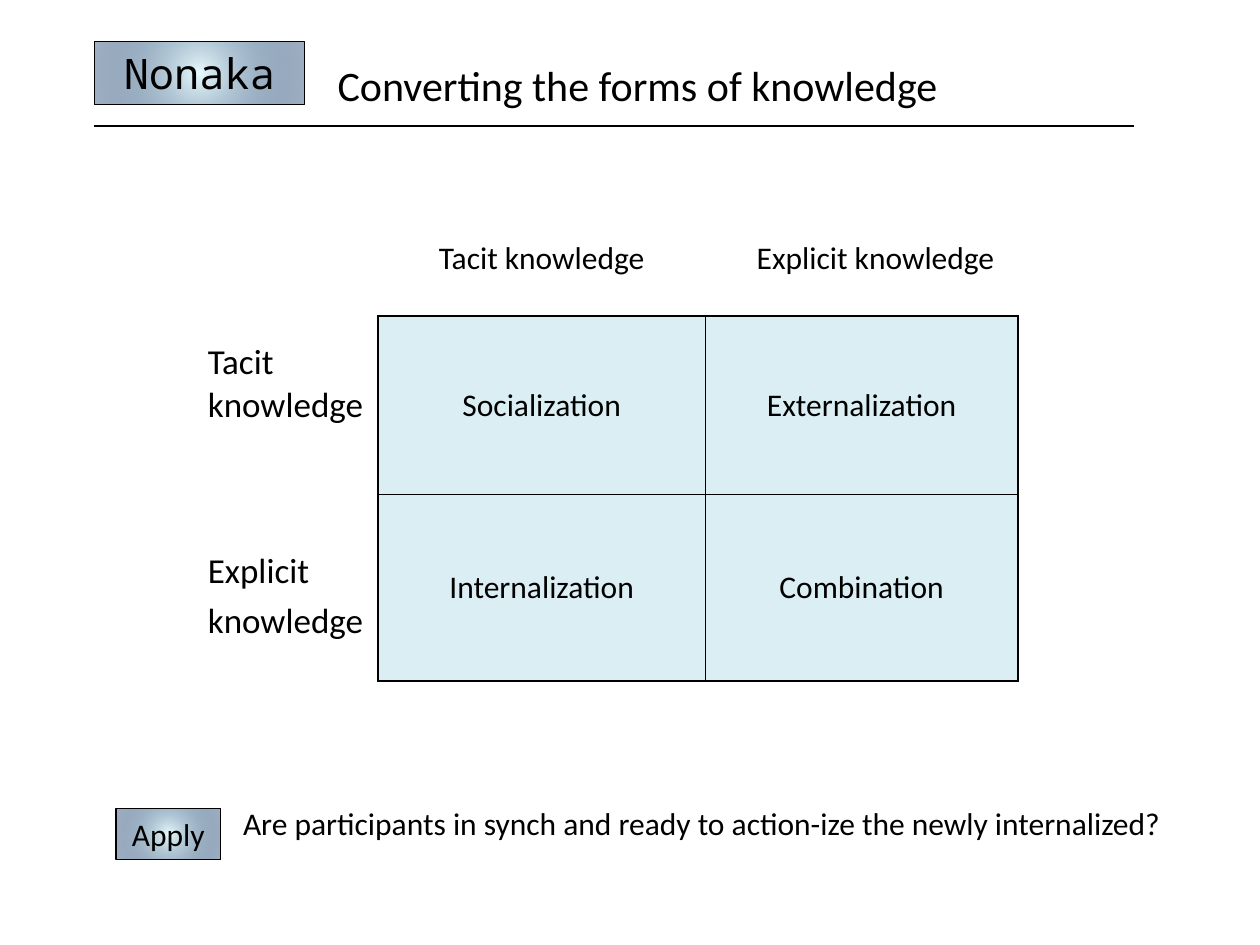
from dataclasses import dataclass
from typing import Any, NamedTuple

from lxml import etree
from pptx import Presentation
from pptx import util as u
from pptx.dml.color import RGBColor
from pptx.enum import shapes, text
from pptx.oxml import ns, parse_xml


@dataclass(frozen=True)
class Theme:
    ink: str = "000000"
    cell: str = "DAEEF3"
    glow: str = "E8FBFE"
    edge: str = "00295C"
    font: str = "Calibri"
    mono: str = "Noto Sans Mono"
    head: int = 24
    side: int = 20
    body: int = 18


class Box(NamedTuple):
    left: float
    top: float
    width: float
    height: float

    def size(self) -> list[u.Length]:
        return [u.Cm(v) for v in self]


class Badge(NamedTuple):
    label: str
    box: Box
    size: int
    font: str


class Cell(NamedTuple):
    row: int
    col: int
    label: str
    size: int
    edges: str = ""
    fill: str = ""
    align: Any = text.PP_ALIGN.CENTER
    anchor: Any = text.MSO_ANCHOR.TOP
    space: float = 1.0
    left: float = 0.18
    top: float = 0.0


T = Theme()
PLAIN = "{2D5ABB26-0587-4C30-8999-92F81FD0307C}"  # table style without grid
COLS = (3.61, 6.6, 6.3)
ROWS = (1.65, 3.6, 3.76)
GRID = Box(4.01, 4.72, sum(COLS), sum(ROWS))
LEFT, MID = text.PP_ALIGN.LEFT, text.MSO_ANCHOR.MIDDLE

BADGES = (
    Badge("Nonaka", Box(1.9, 0.84, 4.24, 1.27), T.head, T.mono),
    Badge("Apply", Box(2.34, 16.3, 2.11, 1.03), T.body, T.font),
)
QUADS = (("Socialization", "Externalization"),
         ("Internalization", "Combination"))
CELLS = [
    Cell(0, 1, "Tacit knowledge", T.body, "B", space=1.15),
    Cell(0, 2, "Explicit knowledge", T.body, "B", space=1.15, left=0.74),
    Cell(1, 0, "Tacit\vknowledge", T.side, "R", align=LEFT, top=0.5),
    Cell(2, 0, "Explicit\vknowledge", T.side, "R", align=LEFT,
         space=1.15, top=1.0),
] + [
    Cell(r, c, name, T.body, "LRTB", T.cell, anchor=MID)
    for r, line in enumerate(QUADS, 1) for c, name in enumerate(line, 1)
]


def style(obj: Any, vals: dict[str, Any]) -> None:
    for key, val in vals.items():
        setattr(obj, key, val)


def write(frame: Any, label: str, size: int, font: str = T.font,
          align: Any = LEFT, space: float = 1.0) -> None:
    frame.text = label
    para = frame.paragraphs[0]
    style(para, {"alignment": align, "line_spacing": space})
    for run in para.runs:
        style(run.font, {"size": u.Pt(size), "name": font})
        run.font.color.rgb = RGBColor.from_string(T.ink)


def draw_badge(slide: Any, badge: Badge) -> None:
    shape = slide.shapes.add_shape(shapes.MSO_SHAPE.RECTANGLE,
                                   *badge.box.size())
    shape.shadow.inherit = False
    shape.line.color.rgb = RGBColor.from_string(T.ink)
    shape.line.width = u.Pt(0.75)
    # Radial gradient that fades out towards the edge
    grad = parse_xml(
        f'<a:gradFill {ns.nsdecls("a")}><a:gsLst>'
        f'<a:gs pos="0"><a:srgbClr val="{T.glow}"/></a:gs>'
        f'<a:gs pos="100000"><a:srgbClr val="{T.edge}">'
        '<a:alpha val="36000"/></a:srgbClr></a:gs></a:gsLst>'
        '<a:path path="circle"><a:fillToRect l="50000" t="50000" '
        'r="50000" b="50000"/></a:path></a:gradFill>')
    shape._element.spPr.find(ns.qn("a:prstGeom")).addnext(grad)
    style(shape.text_frame, {"word_wrap": True, "vertical_anchor": MID})
    write(shape.text_frame, badge.label, badge.size, badge.font,
          text.PP_ALIGN.CENTER)


def draw_edges(cell: Any, edges: str) -> None:
    props = cell._tc.get_or_add_tcPr()
    for spot, side in enumerate(edges):
        line = parse_xml(
            f'<a:ln{side} {ns.nsdecls("a")} w="12700"><a:solidFill>'
            f'<a:srgbClr val="{T.ink}"/></a:solidFill></a:ln{side}>')
        props.insert(spot, line)


def draw_cell(table: Any, item: Cell) -> None:
    cell = table.cell(item.row, item.col)
    style(cell, {"margin_left": u.Cm(item.left), "margin_right": u.Cm(0.18),
                 "margin_top": u.Cm(item.top), "margin_bottom": 0,
                 "vertical_anchor": item.anchor})
    write(cell.text_frame, item.label, item.size, align=item.align,
          space=item.space)
    if item.fill:
        cell.fill.solid()
        cell.fill.fore_color.rgb = RGBColor.from_string(item.fill)
    draw_edges(cell, item.edges)


def draw_table(slide: Any) -> None:
    table = slide.shapes.add_table(len(ROWS), len(COLS), *GRID.size()).table
    style(table, {"first_row": False, "horz_banding": False})
    table._tbl.tblPr.find(ns.qn("a:tableStyleId")).text = PLAIN
    for col, width in zip(table.columns, COLS):
        col.width = u.Cm(width)
    for row, height in zip(table.rows, ROWS):
        row.height = u.Cm(height)
    for item in CELLS:
        draw_cell(table, item)


def draw_rule(slide: Any) -> None:
    rule = slide.shapes.add_connector(
        shapes.MSO_CONNECTOR.STRAIGHT,
        *(u.Cm(v) for v in (1.9, 2.54, 22.86, 2.54)))
    rule.line.color.rgb = RGBColor.from_string(T.ink)
    rule.line.width = u.Pt(0.75)
    etree.SubElement(rule._element.spPr, ns.qn("a:effectLst"))


def draw_text(shape: Any, box: Box, label: str, size: int) -> None:
    style(shape, dict(zip(box._fields, box.size())))
    style(shape.text_frame, {"word_wrap": True,
                             "auto_size": text.MSO_AUTO_SIZE.NONE,
                             "vertical_anchor": text.MSO_ANCHOR.TOP})
    write(shape.text_frame, label, size)


def main() -> None:
    deck = Presentation()
    style(deck, {"slide_width": u.Cm(25.4), "slide_height": u.Cm(19.05)})
    slide = deck.slides.add_slide(deck.slide_layouts[5])

    # Heading
    draw_text(slide.shapes.title, Box(6.55, 1.07, 17.78, 1.27),
              "Converting the forms of knowledge", T.head)
    draw_rule(slide)

    # Knowledge matrix
    draw_table(slide)

    # Question at the foot
    ask = Box(4.65, 16.08, 19.69, 1.8)
    draw_text(slide.shapes.add_textbox(*ask.size()), ask,
              "Are participants in synch and ready to action-ize "
              "the newly internalized?", T.body)

    # Gradient labels
    for badge in BADGES:
        draw_badge(slide, badge)

    deck.save("out.pptx")


if __name__ == "__main__":
    main()
